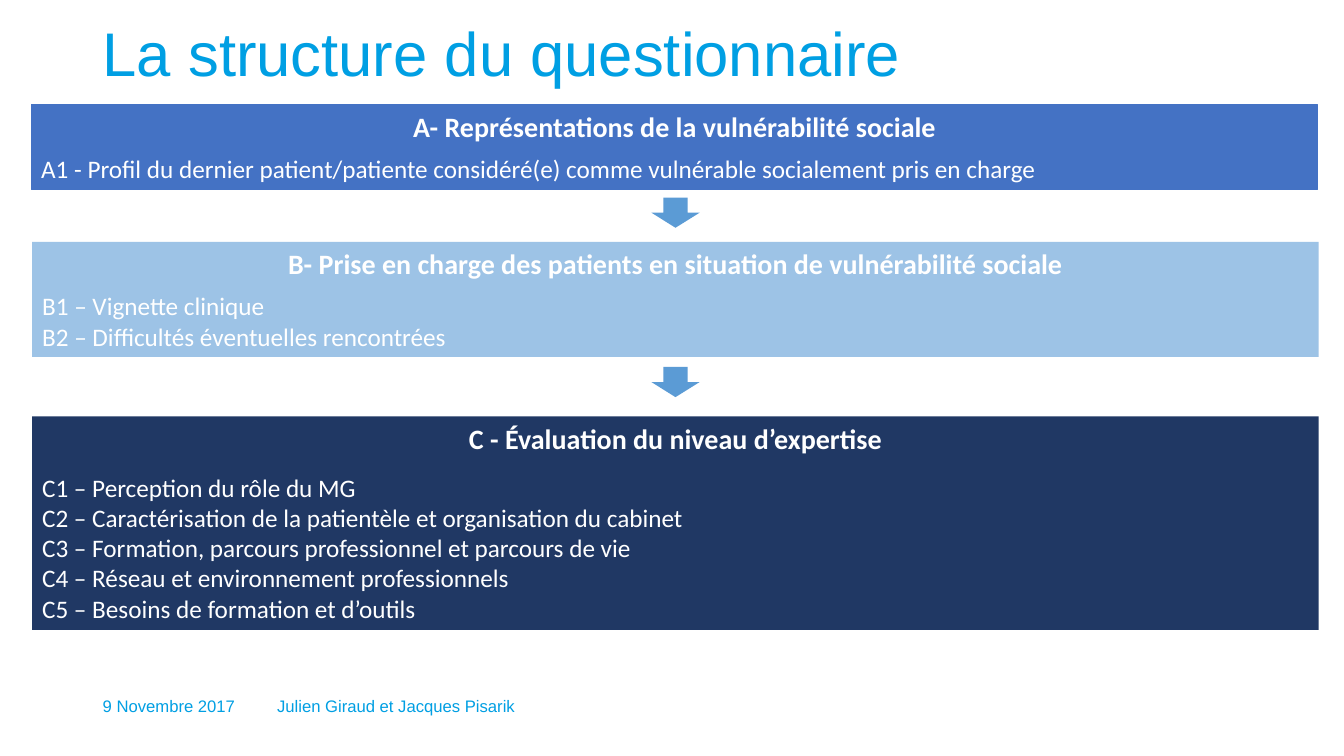
from dataclasses import dataclass
from typing import NamedTuple
from pptx import Presentation
from pptx.dml.color import RGBColor as Rgb
from pptx.enum.shapes import MSO_SHAPE as Kind
from pptx.enum.text import MSO_ANCHOR as Anchor, PP_ALIGN as Align
from pptx.util import Inches, Pt


@dataclass(frozen=True)
class Theme:
    title: str = "009FE3"
    arrow: str = "5B9BD5"
    white: str = "FFFFFF"
    sans: str = "Arial"
    body: str = "Calibri"
    big: float = 44
    head: float = 20
    item: float = 18
    foot: float = 11.9


class Label(NamedTuple):
    text: str
    left: float
    top: float
    width: float
    height: float
    size: float
    lead: float


class Panel(NamedTuple):
    left: float
    top: float
    height: float
    fill: str
    gap: float
    head: str
    items: tuple[str, ...]
    edge: bool = False


THEME = Theme()
WIDTH = 12.76

LABELS = (
    Label("La structure du questionnaire", 0.92, -0.16, 11.5, 1.45, THEME.big, 0.9),
    Label("9 Novembre 2017", 0.92, 6.83, 1.58, 0.38, THEME.foot, 0.8),
    Label("Julien Giraud et Jacques Pisarik", 2.65, 6.83, 2.64, 0.38, THEME.foot, 0.8),
)

PANELS = (
    Panel(0.31, 1.04, 0.84, "4472C4", 7.3, "A- Représentations de la vulnérabilité sociale", (
        "A1 - Profil du dernier patient/patiente considéré(e) comme vulnérable socialement pris en charge",
    ), True),
    Panel(0.32, 2.4, 1.14, "9DC3E6", 7.3,
          "B- Prise en charge des patients en situation de vulnérabilité sociale", (
              "B1 – Vignette clinique",
              "B2 – Difficultés éventuelles rencontrées",
          )),
    Panel(0.32, 4.13, 2.12, "203864", 12.2, "C - Évaluation du niveau d’expertise", (
        "C1 – Perception du rôle du MG",
        "C2 – Caractérisation de la patientèle et organisation du cabinet",
        "C3 – Formation, parcours professionnel et parcours de vie",
        "C4 – Réseau et environnement professionnels",
        "C5 – Besoins de formation et d’outils",
    )),
)

ARROWS = (1.96, 3.64)


def write(frame, text: str, *, size: float, font: str, color: str, bold: bool = False,
          align=Align.LEFT, lead: float = 1.0, before: float = 0, first: bool = False) -> None:
    para = frame.paragraphs[0] if first else frame.add_paragraph()
    para.alignment = align
    para.line_spacing = lead
    para.space_before = Pt(before)
    run = para.add_run()
    run.text = text
    run.font.size = Pt(size)
    run.font.name = font
    run.font.bold = bold
    run.font.color.rgb = Rgb.from_string(color)


def block(slide, kind, left: float, top: float, width: float, height: float, fill: str,
          edge: bool = False):
    shape = slide.shapes.add_shape(kind, Inches(left), Inches(top), Inches(width), Inches(height))
    shape.shadow.inherit = False
    shape.fill.solid()
    shape.fill.fore_color.rgb = Rgb.from_string(fill)
    if edge:
        shape.line.color.rgb = Rgb.from_string(fill)
        shape.line.width = Pt(0.75)
    else:
        shape.line.fill.background()
    return shape


def draw_label(slide, label: Label) -> None:
    box = slide.shapes.add_textbox(Inches(label.left), Inches(label.top),
                                   Inches(label.width), Inches(label.height))
    frame = box.text_frame
    frame.word_wrap = True
    frame.vertical_anchor = Anchor.MIDDLE
    write(frame, label.text, size=label.size, font=THEME.sans, color=THEME.title,
          lead=label.lead, first=True)


def draw_panel(slide, panel: Panel) -> None:
    shape = block(slide, Kind.RECTANGLE, panel.left, panel.top, WIDTH, panel.height,
                  panel.fill, panel.edge)
    frame = shape.text_frame
    frame.word_wrap = True
    frame.vertical_anchor = Anchor.TOP
    write(frame, panel.head, size=THEME.head, font=THEME.body, color=THEME.white,
          bold=True, align=Align.CENTER, first=True)
    for rank, item in enumerate(panel.items):
        write(frame, item, size=THEME.item, font=THEME.body, color=THEME.white,
              before=0 if rank else panel.gap)


def main() -> None:
    deck = Presentation()
    deck.slide_width = Inches(13.33)
    deck.slide_height = Inches(7.5)
    slide = deck.slides.add_slide(deck.slide_layouts[6])
    for label in LABELS:
        draw_label(slide, label)
    for panel in PANELS:
        draw_panel(slide, panel)
    for top in ARROWS:
        block(slide, Kind.DOWN_ARROW, 6.46, top, 0.48, 0.3, THEME.arrow)
    deck.save("out.pptx")


if __name__ == "__main__":
    main()
